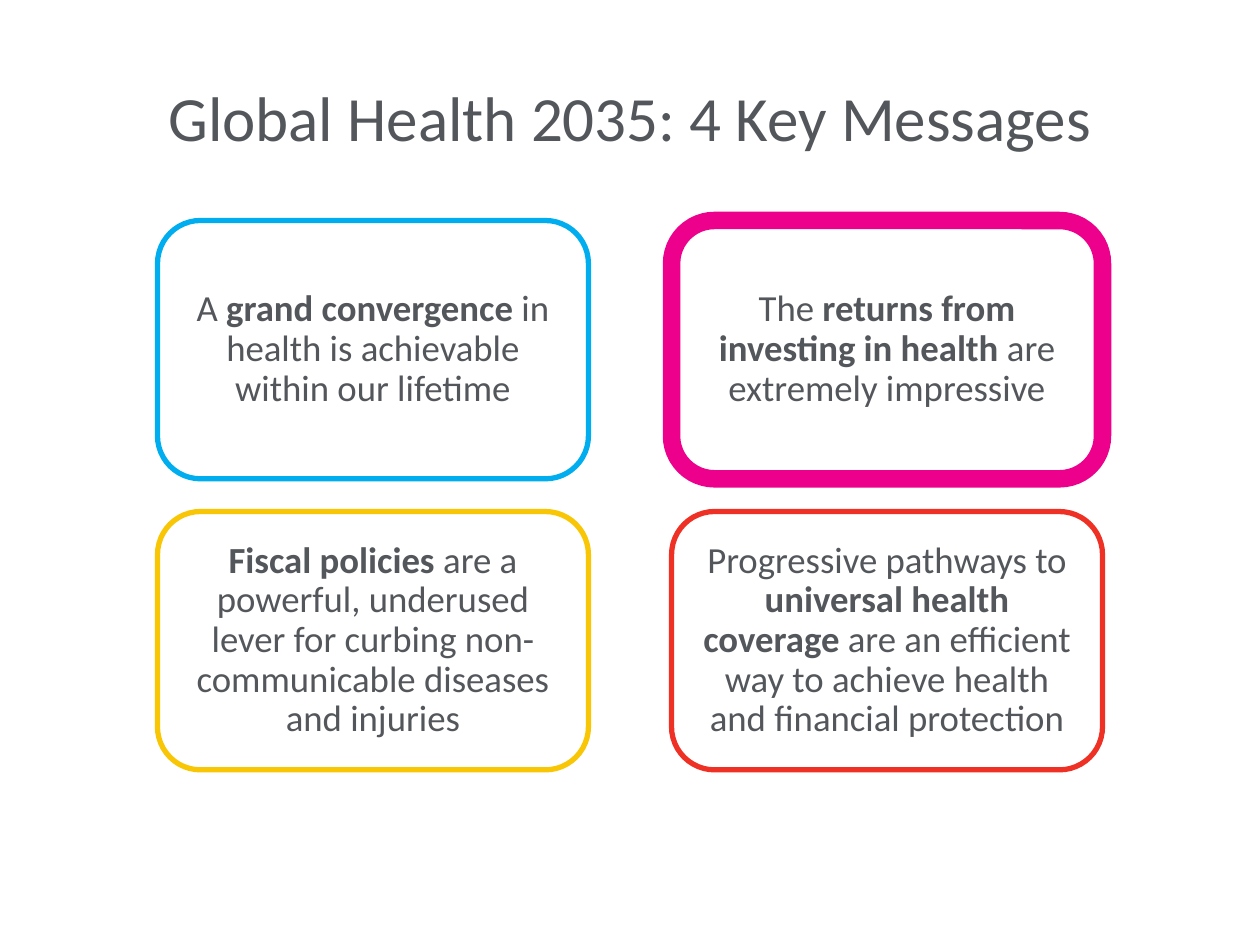
from pptx import Presentation
from pptx.dml.color import RGBColor
from pptx.enum.shapes import MSO_SHAPE
from pptx.enum.text import MSO_ANCHOR, PP_ALIGN
from pptx.util import Inches, Pt

ROUND_RECT = MSO_SHAPE.ROUNDED_RECTANGLE
MIDDLE = MSO_ANCHOR.MIDDLE
CENTER = PP_ALIGN.CENTER

GRAY = RGBColor(0x53, 0x56, 0x5A)
WHITE = RGBColor(0xFF, 0xFF, 0xFF)
BLUE = RGBColor(0x00, 0xAE, 0xEF)
PINK = RGBColor(0xEC, 0x00, 0x8C)
YELLOW = RGBColor(0xF9, 0xC6, 0x06)
RED = RGBColor(0xEE, 0x31, 0x24)

# Border colour, border width, runs as (text, bold); in reading order
MESSAGES = [
    (BLUE, 3, [("A ", False), ("grand convergence", True),
               (" in health is achievable within our lifetime", False)]),
    (PINK, 10, [("The ", False), ("returns from investing in health", True),
                (" are extremely impressive", False)]),
    (YELLOW, 3, [("Fiscal policies ", True),
                 ("are a powerful, underused lever for curbing "
                  "non-communicable diseases and injuries", False)]),
    (RED, 3, [("Progressive pathways to ", False),
              ("universal health coverage ", True),
              ("are an efficient way to achieve health and "
               "financial protection", False)]),
]


def write_text(s, runs, size, line_spacing=1.0, inset=0.1):
    """Fill a shape with one centred paragraph of (text, bold) runs."""
    tf = s.text_frame
    tf.word_wrap = True
    tf.vertical_anchor = MIDDLE
    tf.margin_left = tf.margin_right = Inches(inset)
    tf.margin_top = tf.margin_bottom = Inches(inset)
    p = tf.paragraphs[0]
    p.alignment = CENTER
    p.line_spacing = line_spacing
    for text, bold in runs:
        r = p.add_run()
        r.text = text
        r.font.name = "Calibri"
        r.font.size = Pt(size)
        r.font.bold = bold
        r.font.color.rgb = GRAY


def add_title(slide, left, top, width, height):
    s = slide.shapes.add_textbox(Inches(left), Inches(top),
                                 Inches(width), Inches(height))
    write_text(s, [("Global Health 2035: 4 Key Messages", False)], size=36)


def add_card(slide, left, top, width, height, color, border, runs):
    s = slide.shapes.add_shape(ROUND_RECT, Inches(left), Inches(top),
                               Inches(width), Inches(height))
    s.shadow.inherit = False
    s.fill.solid()
    s.fill.fore_color.rgb = WHITE
    s.line.color.rgb = color
    s.line.width = Pt(border)
    write_text(s, runs, size=21, line_spacing=0.9, inset=0.09)


def add_message_grid(slide, left, top, width, height):
    """Place the messages in a two-by-two grid."""
    card_w, card_h = 3.42, 2.05
    for i, (color, border, runs) in enumerate(MESSAGES):
        row, col = divmod(i, 2)
        add_card(slide, left + col * (width - card_w),
                 top + row * (height - card_h),
                 card_w, card_h, color, border, runs)


def main():
    prs = Presentation()
    prs.slide_width, prs.slide_height = Inches(10), Inches(7.5)
    slide = prs.slides.add_slide(prs.slide_layouts[6])
    add_title(slide, 0.5, 0.3, 9, 1.25)
    add_message_grid(slide, 1.25, 1.75, 7.5, 4.36)
    prs.save("out.pptx")


if __name__ == "__main__":
    main()
